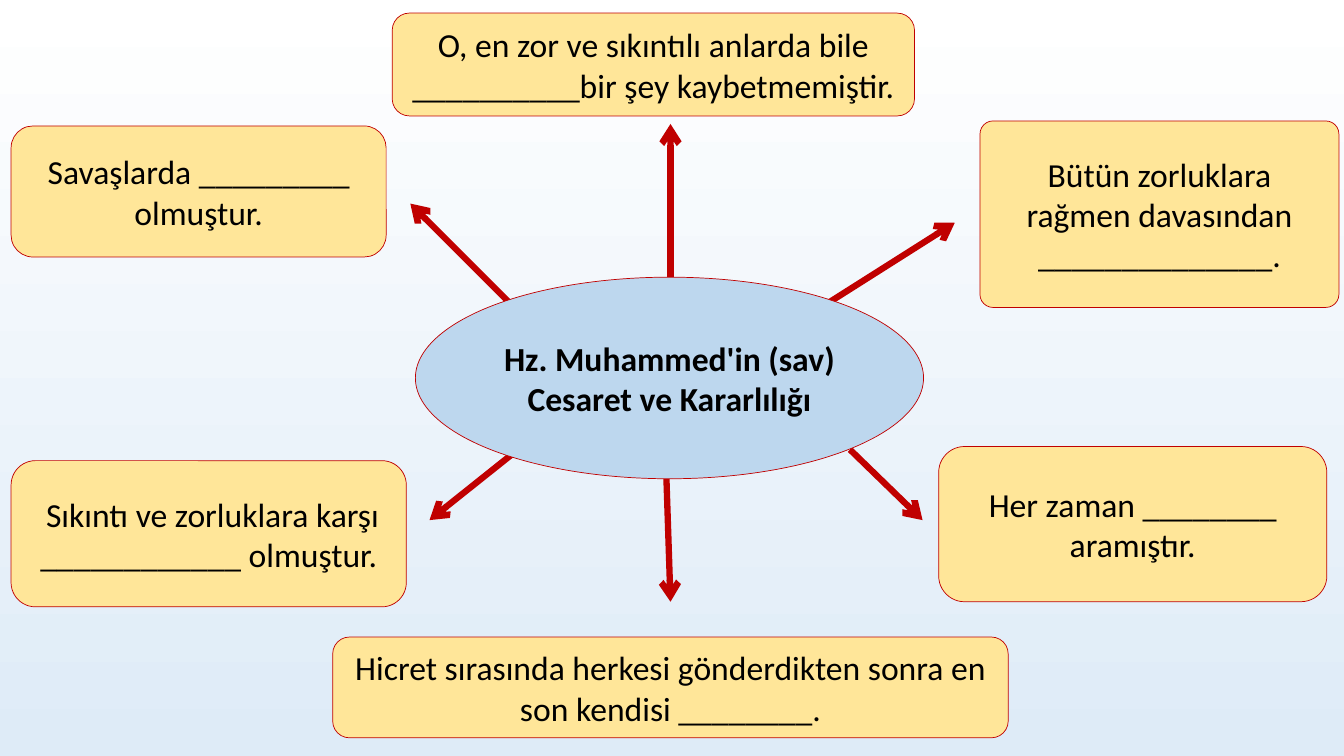
from dataclasses import dataclass

from lxml.etree import SubElement
from pptx import Presentation
from pptx.dml.color import RGBColor as Rgb
from pptx.enum.shapes import MSO_CONNECTOR as Link, MSO_SHAPE as Kind
from pptx.enum.text import MSO_ANCHOR as Anchor, PP_ALIGN as Align
from pptx.oxml.ns import qn
from pptx.shapes.autoshape import Shape
from pptx.slide import Slide
from pptx.util import Emu, Pt

PX = 9144  # 100 px to the inch
COLORS = {
    "top": "FFFFFF",
    "base": "DEEBF7",
    "card": "FFE699",
    "hub": "BDD7EE",
    "line": "C00000",
    "text": "000000",
}


@dataclass
class Node:
    text: str
    left: int
    top: int
    width: int
    height: int
    kind: Kind = Kind.ROUNDED_RECTANGLE
    fill: str = "card"
    bold: bool = False
    round: float | None = None


@dataclass
class Arrow:
    x1: int
    y1: int
    x2: int
    y2: int


CARDS = [
    Node("Savaşlarda _________ olmuştur.", 11, 125, 372, 130),
    Node("O, en zor ve sıkıntılı anlarda bile __________bir şey kaybetmemiştir.",
         389, 13, 518, 102),
    Node("Bütün zorluklara rağmen davasından ______________.",
         972, 120, 356, 185, round=0.07),
    Node(" Sıkıntı ve zorluklara karşı ____________ olmuştur.", 11, 457, 392, 145),
    Node("Hicret sırasında herkesi gönderdikten sonra en son kendisi ________.",
         330, 632, 670, 100),
    Node("Her zaman ________ aramıştır.", 931, 443, 385, 154),
]
ARROWS = [
    Arrow(665, 275, 665, 123),
    Arrow(816, 304, 947, 221),
    Arrow(661, 475, 665, 597),
    Arrow(509, 304, 407, 202),
    Arrow(843, 446, 915, 516),
    Arrow(520, 441, 426, 516),
]
HUB = Node("Hz. Muhammed'in (sav) Cesaret ve Kararlılığı", 412, 275, 504, 200,
           kind=Kind.OVAL, fill="hub", bold=True)


def px(*sizes: int) -> list[Emu]:
    return [Emu(size * PX) for size in sizes]


def color(name: str) -> Rgb:
    return Rgb.from_string(COLORS[name])


def write(shape: Shape, text: str, *, size: int = 24, bold: bool = False,
          face: str = "Calibri", ink: str = "text") -> None:
    frame = shape.text_frame
    frame.word_wrap = True
    frame.vertical_anchor = Anchor.MIDDLE
    para = frame.paragraphs[0]
    para.alignment = Align.CENTER
    run = para.add_run()
    run.text = text
    font = run.font
    font.name, font.size, font.bold = face, Pt(size), bold
    font.color.rgb = color(ink)


def draw_node(slide: Slide, node: Node) -> None:
    shape = slide.shapes.add_shape(
        node.kind, *px(node.left, node.top, node.width, node.height))
    shape.shadow.inherit = False
    if node.round is not None:
        shape.adjustments[0] = node.round
    shape.fill.solid()
    shape.fill.fore_color.rgb = color(node.fill)
    shape.line.color.rgb = color("line")
    shape.line.width = Pt(0.5)
    write(shape, node.text, bold=node.bold)


def draw_arrow(slide: Slide, arrow: Arrow) -> None:
    link = slide.shapes.add_connector(
        Link.STRAIGHT, *px(arrow.x1, arrow.y1, arrow.x2, arrow.y2))
    link.line.color.rgb = color("line")
    link.line.width = Pt(4.5)
    SubElement(link.line._get_or_add_ln(), qn("a:tailEnd"), type="arrow")
    SubElement(link._element.spPr, qn("a:effectLst"))


def paint(slide: Slide) -> None:
    fill = slide.background.fill
    fill.gradient()
    fill.gradient_angle = 270
    for stop, name, spot in zip(fill.gradient_stops, ("top", "base"), (0, 1)):
        stop.color.rgb = color(name)
        stop.position = spot


def main() -> None:
    deck = Presentation()
    deck.slide_width, deck.slide_height = px(1333, 750)
    slide = deck.slides.add_slide(deck.slide_layouts[6])
    paint(slide)

    # Outer cards
    for card in CARDS:
        draw_node(slide, card)

    # Arrows, with the hub on top of them
    for arrow in ARROWS:
        draw_arrow(slide, arrow)
    draw_node(slide, HUB)

    deck.save("out.pptx")


if __name__ == "__main__":
    main()
